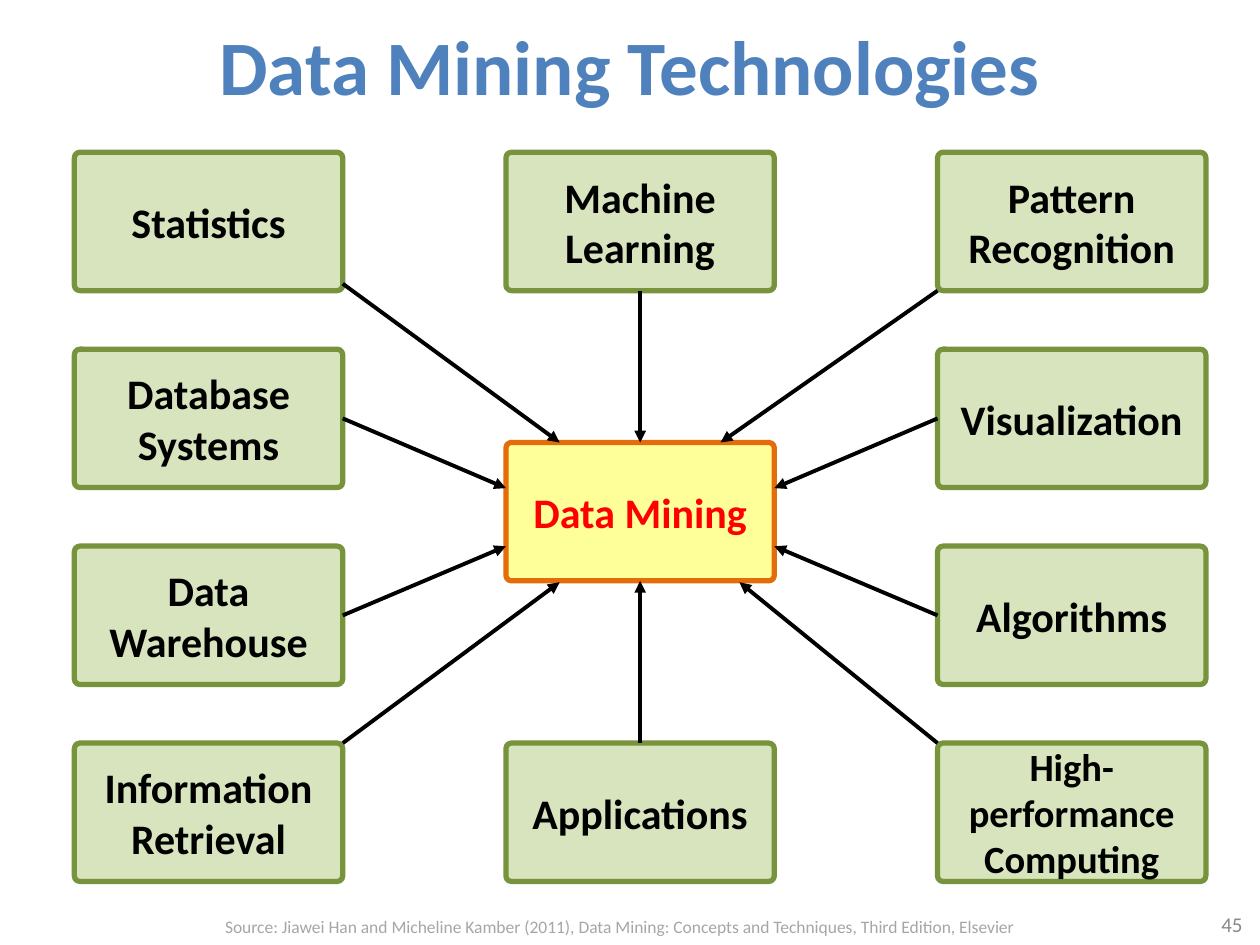
from typing import NamedTuple

from lxml.etree import SubElement
from pptx import Presentation
from pptx.dml.color import RGBColor
from pptx.enum.shapes import MSO_CONNECTOR, MSO_SHAPE
from pptx.enum.text import MSO_ANCHOR, PP_ALIGN
from pptx.oxml.ns import qn
from pptx.util import Cm, Pt

# Grid, in centimetres
LEFT, TOP = 1.5, 3.07
COLUMN_STEP, ROW_STEP = 8.7, 3.97
BOX_WIDTH, BOX_HEIGHT = 5.41, 2.79
HUB_CORNER = (LEFT + COLUMN_STEP, 8.92)


class Technology(NamedTuple):
    label: str
    column: int
    row: int
    start: tuple[float, float]  # arrow start, as fractions of its own box
    end: tuple[float, float]    # arrow end, as fractions of the hub
    size: int = 24


class BoxStyle(NamedTuple):
    fill: str
    line: str
    text: str


TECHNOLOGY_STYLE = BoxStyle("D7E4BD", "77933C", "000000")
HUB_STYLE = BoxStyle("FFFF99", "E46C0A", "FF0000")

TECHNOLOGIES = [
    Technology("Machine Learning", 1, 0, (0.5, 1), (0.5, 0)),
    Technology("Statistics", 0, 0, (1, 0.95), (0.2, 0)),
    Technology("Database Systems", 0, 1, (1, 0.5), (0, 0.33)),
    Technology("Data Warehouse", 0, 2, (1, 0.5), (0, 0.75)),
    Technology("Information Retrieval", 0, 3, (1, 0), (0.2, 1.01)),
    Technology("Applications", 1, 3, (0.5, 0), (0.5, 1)),
    Technology("High-performance Computing", 2, 3, (0, 0), (0.87, 1.01), 22),
    Technology("Algorithms", 2, 2, (0, 0.5), (1, 0.75)),
    Technology("Visualization", 2, 1, (0, 0.5), (1, 0.33)),
    Technology("Pattern Recognition", 2, 0, (0, 1), (0.8, 0)),
]


def rgb(value: str) -> RGBColor:
    return RGBColor.from_string(value)


def write(shape, text: str, size: int, color: str, bold: bool = False,
          align=PP_ALIGN.CENTER, **frame_format) -> None:
    """Put one formatted paragraph into a shape."""
    frame = shape.text_frame
    for name, value in {"word_wrap": True, **frame_format}.items():
        setattr(frame, name, value)
    paragraph = frame.paragraphs[0]
    paragraph.alignment = align
    run = paragraph.add_run()
    run.text = text
    for name, value in {"name": "Calibri", "size": Pt(size), "bold": bold}.items():
        setattr(run.font, name, value)
    run.font.color.rgb = rgb(color)


def corner_of(technology: Technology) -> tuple[float, float]:
    return (LEFT + technology.column * COLUMN_STEP,
            TOP + technology.row * ROW_STEP)


def point_on(corner: tuple[float, float], fraction: tuple[float, float]):
    return (Cm(corner[0] + fraction[0] * BOX_WIDTH),
            Cm(corner[1] + fraction[1] * BOX_HEIGHT))


def add_box(slide, corner: tuple[float, float], label: str,
            style: BoxStyle, size: int = 24) -> None:
    box = slide.shapes.add_shape(
        MSO_SHAPE.ROUNDED_RECTANGLE, Cm(corner[0]), Cm(corner[1]),
        Cm(BOX_WIDTH), Cm(BOX_HEIGHT))
    box.adjustments[0] = 0.04
    box.shadow.inherit = False
    box.fill.solid()
    box.fill.fore_color.rgb = rgb(style.fill)
    box.line.color.rgb = rgb(style.line)
    box.line.width = Pt(3)
    write(box, label, size, style.text, bold=True,
          vertical_anchor=MSO_ANCHOR.MIDDLE,
          margin_left=0, margin_right=0, margin_top=0, margin_bottom=0)


def add_arrow(slide, technology: Technology) -> None:
    arrow = slide.shapes.add_connector(
        MSO_CONNECTOR.STRAIGHT,
        *point_on(corner_of(technology), technology.start),
        *point_on(HUB_CORNER, technology.end))
    arrow.line.color.rgb = rgb("000000")
    arrow.line.width = Pt(2.25)
    SubElement(arrow.line._get_or_add_ln(), qn("a:tailEnd"), type="triangle")
    SubElement(arrow._element.spPr, qn("a:effectLst"))


def main() -> None:
    presentation = Presentation()
    presentation.slide_width, presentation.slide_height = Cm(25.4), Cm(19.05)
    slide = presentation.slides.add_slide(presentation.slide_layouts[5])

    # Title
    title = slide.shapes.title
    title.left, title.top, title.width, title.height = (
        Cm(1.27), Cm(0.13), Cm(22.86), Cm(2.36))
    write(title, "Data Mining Technologies", 44, "4F81BD", bold=True,
          vertical_anchor=MSO_ANCHOR.MIDDLE)

    # Page number and source
    page_number = slide.shapes.add_textbox(Cm(19.38), Cm(18.11), Cm(5.92), Cm(1.02))
    write(page_number, "45", 12, "898989", align=PP_ALIGN.RIGHT,
          vertical_anchor=MSO_ANCHOR.MIDDLE)
    source = slide.shapes.add_textbox(Cm(2.49), Cm(18.34), Cm(19.99), Cm(0.69))
    write(source, "Source: Jiawei Han and Micheline Kamber (2011), Data Mining: "
          "Concepts and Techniques, Third Edition, Elsevier", 10, "A6A6A6")

    # Hub, surrounding technologies and their arrows
    add_box(slide, HUB_CORNER, "Data Mining", HUB_STYLE)
    for technology in TECHNOLOGIES:
        add_box(slide, corner_of(technology), technology.label,
                TECHNOLOGY_STYLE, technology.size)
    for technology in TECHNOLOGIES:
        add_arrow(slide, technology)

    presentation.save("out.pptx")


if __name__ == "__main__":
    main()
